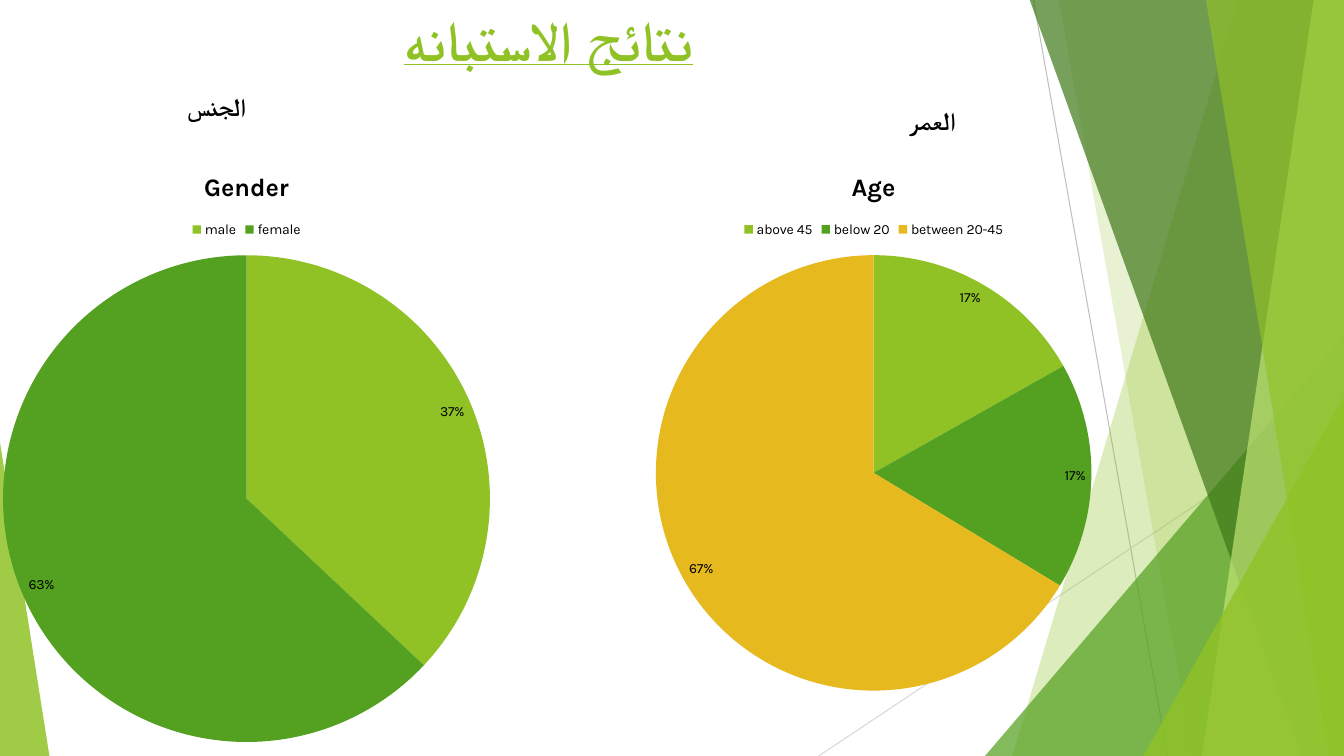
from lxml import etree
from pptx import Presentation
from pptx.chart.data import CategoryChartData
from pptx.dml.color import RGBColor
from pptx.enum.chart import XL_CHART_TYPE, XL_LABEL_POSITION, XL_LEGEND_POSITION
from pptx.enum.shapes import MSO_CONNECTOR, MSO_SHAPE
from pptx.enum.text import MSO_ANCHOR, MSO_AUTO_SIZE, PP_ALIGN
from pptx.oxml.ns import qn
from pptx.util import Inches, Pt

WIDTH, HEIGHT = 13.33, 7.5
TOP = -0.01
LIME, GREEN, DARK_GREEN = "90C226", "54A021", "3F7819"
PALE_LIME, GOLD, BLACK = "C0E474", "E6B91E", "000000"


def color(hex_code):
    return RGBColor.from_string(hex_code)


class SlideBuilder:
    font_name = "Karla"

    def __init__(self, slide):
        self.slide = slide

    def line(self, start, end, hex_code):
        connector = self.slide.shapes.add_connector(
            MSO_CONNECTOR.STRAIGHT, *(Inches(value) for value in start + end))
        connector.line.color.rgb = color(hex_code)
        connector.line.width = Pt(0.75)
        etree.SubElement(connector._element.spPr, qn("a:effectLst"))

    def tint(self, shape, hex_code, opacity):
        shape.shadow.inherit = False
        shape.line.fill.background()
        shape.fill.solid()
        shape.fill.fore_color.rgb = color(hex_code)
        color_element = shape._element.spPr.find(qn("a:solidFill"))[0]
        etree.SubElement(color_element, qn("a:alpha"), val=str(opacity * 1000))

    def band(self, top_left, bottom_left, hex_code, opacity):
        """A slanted band that reaches to the right edge of the slide."""
        builder = self.slide.shapes.build_freeform(Inches(top_left), Inches(TOP))
        corners = [(WIDTH, TOP), (WIDTH, HEIGHT), (bottom_left, HEIGHT)]
        builder.add_line_segments([(Inches(x), Inches(y)) for x, y in corners])
        self.tint(builder.convert_to_shape(), hex_code, opacity)

    def triangle(self, left, top, width, apex, hex_code, opacity):
        """A right triangle that stands on the bottom edge of the slide."""
        shape = self.slide.shapes.add_shape(
            MSO_SHAPE.ISOSCELES_TRIANGLE, Inches(left), Inches(top),
            Inches(width), Inches(HEIGHT - top))
        shape.adjustments[0] = apex
        self.tint(shape, hex_code, opacity)

    def style_arabic(self, text_frame, text, size, hex_code, alignment):
        text_frame.text = text
        text_frame.word_wrap = True
        text_frame.vertical_anchor = MSO_ANCHOR.TOP
        paragraph = text_frame.paragraphs[0]
        paragraph.alignment = alignment
        font = paragraph.font
        font.name, font.size, font.bold = self.font_name, Pt(size), True
        font.color.rgb = color(hex_code)
        properties = paragraph._p.pPr
        properties.set("rtl", "1")
        etree.SubElement(properties.find(qn("a:defRPr")), qn("a:cs"),
                         typeface=self.font_name)
        return paragraph

    def title(self, text, left, top, width, height):
        title = self.slide.shapes.title
        title.left, title.top = Inches(left), Inches(top)
        title.width, title.height = Inches(width), Inches(height)
        title.text_frame.auto_size = MSO_AUTO_SIZE.NONE
        paragraph = self.style_arabic(title.text_frame, text, 40, LIME, PP_ALIGN.CENTER)
        paragraph.font.underline = True

    def heading(self, text, left, top, width):
        box = self.slide.shapes.add_textbox(
            Inches(left), Inches(top), Inches(width), Inches(0.4))
        self.style_arabic(box.text_frame, text, 18, BLACK, PP_ALIGN.RIGHT)
        box.text_frame.auto_size = MSO_AUTO_SIZE.SHAPE_TO_FIT_TEXT

    def pie(self, title, slices, left, top, width, height):
        data = CategoryChartData()
        data.categories = [name for name, _, _ in slices]
        data.add_series("Series 1", [value for _, value, _ in slices])
        chart = self.slide.shapes.add_chart(
            XL_CHART_TYPE.PIE, Inches(left), Inches(top),
            Inches(width), Inches(height), data).chart
        chart.font.name, chart.font.size = self.font_name, Pt(10)
        chart.font.color.rgb = color(BLACK)

        chart.has_title = True
        chart.chart_title.include_in_layout = False
        chart.chart_title.text_frame.text = title
        title_font = chart.chart_title.text_frame.paragraphs[0].font
        title_font.name, title_font.size, title_font.bold = self.font_name, Pt(18), True
        title_font.color.rgb = color(BLACK)

        chart.has_legend = True
        chart.legend.position = XL_LEGEND_POSITION.TOP
        chart.legend.include_in_layout = False

        plot = chart.plots[0]
        plot.vary_by_categories = True
        for index, (_, _, hex_code) in enumerate(slices):
            fill = plot.series[0].points[index].format.fill
            fill.solid()
            fill.fore_color.rgb = color(hex_code)

        # The rounded shares can add up to 101, so they are shown as values
        plot.has_data_labels = True
        labels = plot.data_labels
        labels.show_value = True
        labels.number_format, labels.number_format_is_linked = '0"%"', False
        labels.position = XL_LABEL_POSITION.INSIDE_END


def main():
    presentation = Presentation()
    presentation.slide_width = Inches(WIDTH)
    presentation.slide_height = Inches(HEIGHT)
    slide = presentation.slides.add_slide(presentation.slide_layouts[5])
    builder = SlideBuilder(slide)

    # Background lines, bands and corner triangles
    builder.line((10.25, 0), (11.58, HEIGHT), "BFBFBF")
    builder.line((WIDTH, 4.03), (8.12, HEIGHT), "D9D9D9")
    builder.band(12.28, 10.04, LIME, 30)
    builder.band(10.5, 11.83, LIME, 20)
    builder.triangle(9.77, 3.33, 3.56, 1, GREEN, 72)
    builder.band(10.21, 12.91, DARK_GREEN, 70)
    builder.band(13.03, 11.92, PALE_LIME, 70)
    builder.band(11.96, 13.18, LIME, 65)
    builder.triangle(11.34, 3.93, 1.99, 1, LIME, 80)
    builder.triangle(0, 4.39, 0.49, 0, LIME, 85)

    # Title
    builder.title("نتائج الاستبانه", 0.74, 0, 9.4, 1.44)

    # Survey charts
    builder.pie("Gender", [("male", 37, LIME), ("female", 63, GREEN)],
                -0.51, 1.47, 5.91, 6.03)
    builder.pie("Age", [("above 45", 17, LIME), ("below 20", 17, GREEN),
                        ("between 20-45", 67, GOLD)],
                4.52, 1.48, 8.29, 5.51)

    # Chart headings
    builder.heading("العمر", 8.01, 1, 1.57)
    builder.heading("الجنس", 0.93, 0.86, 1.61)

    presentation.save("out.pptx")


if __name__ == "__main__":
    main()
